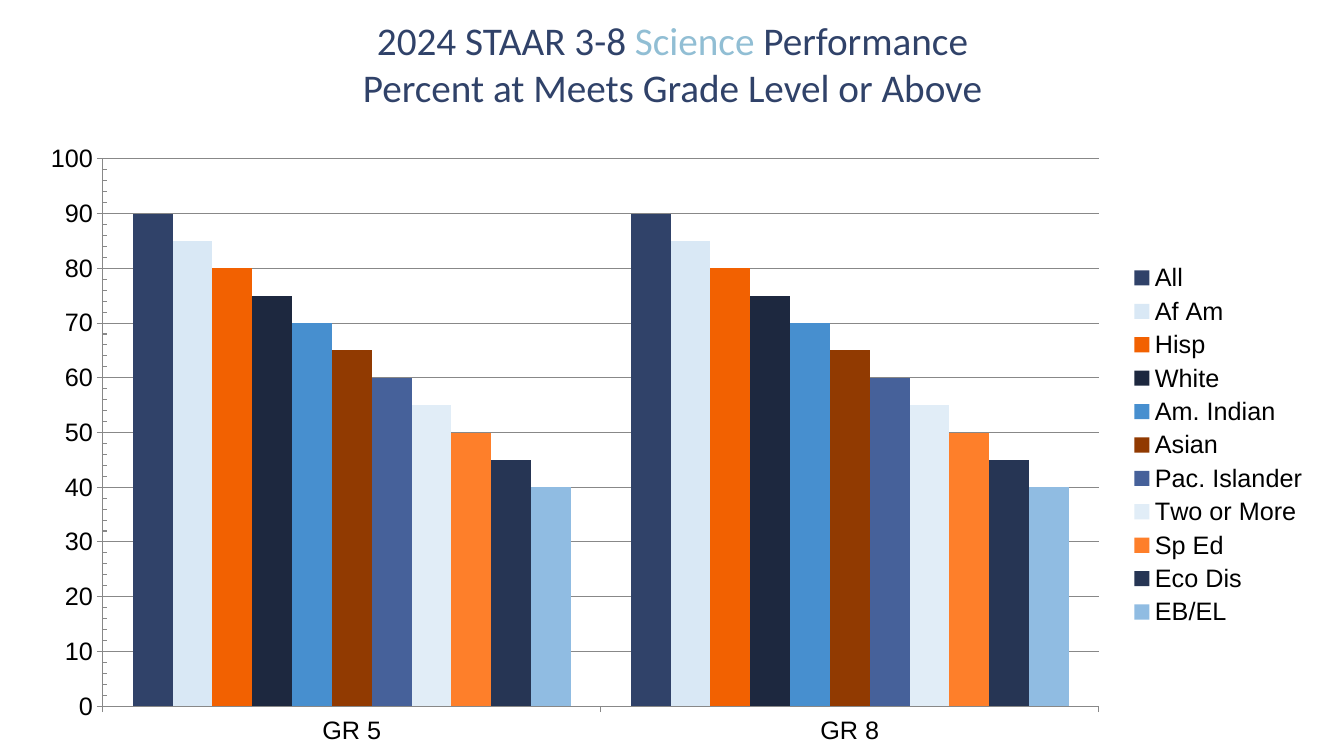
import pptx
import pptx.chart.data
import pptx.dml.color
import pptx.enum.chart
import pptx.enum.text
import pptx.util
from dataclasses import dataclass
from lxml import etree
from pptx.util import Inches


@dataclass(frozen=True)
class Theme:
    navy: str = "304269"
    accent: str = "91BED4"
    text: str = "000000"
    rule: str = "888888"
    title_font: str = "Calibri"
    chart_font: str = "Arial"
    title_size: int = 28
    chart_size: int = 18
    rule_width: float = 0.75


THEME = Theme()
GRADES = ["GR 5", "GR 8"]
# Student group and its bar colour, from highest to lowest
GROUPS = [
    ("All", THEME.navy), ("Af Am", "D9E8F5"), ("Hisp", "F26101"),
    ("White", "1D283F"), ("Am. Indian", "478FCF"), ("Asian", "913A01"),
    ("Pac. Islander", "46619A"), ("Two or More", "E1EDF7"),
    ("Sp Ed", "FE7F2A"), ("Eco Dis", "263554"), ("EB/EL", "90BCE2"),
]
TOP_SCORE, SCORE_STEP = 90, 5


def rgb(value):
    return pptx.dml.color.RGBColor.from_string(value)


def style_font(font, name, size, color):
    font.name = name
    font.size = pptx.util.Pt(size)
    font.color.rgb = rgb(color)


def style_rule(line):
    line.color.rgb = rgb(THEME.rule)
    line.width = pptx.util.Pt(THEME.rule_width)


def add_title(s, left, top, width, height):
    sp = s.shapes.title
    sp.left, sp.top = Inches(left), Inches(top)
    sp.width, sp.height = Inches(width), Inches(height)
    tf = sp.text_frame
    tf.word_wrap = True
    tf.auto_size = pptx.enum.text.MSO_AUTO_SIZE.NONE
    tf.vertical_anchor = pptx.enum.text.MSO_ANCHOR.MIDDLE
    # The deeper bottom inset lifts the two lines towards the top
    tf.margin_bottom = Inches(0.45)
    lines = [
        [("2024 STAAR 3-8 ", THEME.navy), ("Science ", THEME.accent),
         ("Performance", THEME.navy)],
        [("Percent at Meets Grade Level or Above", THEME.navy)],
    ]
    for i, line in enumerate(lines):
        p = tf.add_paragraph() if i else tf.paragraphs[0]
        p.alignment = pptx.enum.text.PP_ALIGN.CENTER
        for text, color in line:
            r = p.add_run()
            r.text = text
            style_font(r.font, THEME.title_font, THEME.title_size, color)


def place_plot(chart, x, y, w, h):
    """Fix the inner plot area, in fractions of the chart."""
    plot_area = chart._chartSpace.chart.plotArea
    ns = plot_area.nsmap["c"]
    for old in plot_area.findall(f"{{{ns}}}layout"):
        plot_area.remove(old)
    layout = etree.Element(f"{{{ns}}}layout")
    manual = etree.SubElement(layout, f"{{{ns}}}manualLayout")
    settings = [("layoutTarget", "inner"), ("xMode", "edge"), ("yMode", "edge"),
                ("x", x), ("y", y), ("w", w), ("h", h)]
    for tag, value in settings:
        etree.SubElement(manual, f"{{{ns}}}{tag}").set("val", str(value))
    plot_area.insert(0, layout)


def add_scores_chart(s, left, top, width, height):
    data = pptx.chart.data.CategoryChartData()
    data.categories = GRADES
    for i, (group, _) in enumerate(GROUPS):
        data.add_series(group, [TOP_SCORE - SCORE_STEP * i] * len(GRADES))
    chart = s.shapes.add_chart(
        pptx.enum.chart.XL_CHART_TYPE.COLUMN_CLUSTERED,
        Inches(left), Inches(top), Inches(width), Inches(height), data).chart
    chart.has_title = False
    style_font(chart.font, THEME.chart_font, THEME.chart_size, THEME.text)
    place_plot(chart, 0.06, 0.04, 0.77, 0.88)

    # Bars
    plot = chart.plots[0]
    plot.gap_width = 150
    plot.overlap = 0
    plot.vary_by_categories = False
    for series, (_, color) in zip(plot.series, GROUPS):
        series.format.fill.solid()
        series.format.fill.fore_color.rgb = rgb(color)

    # Axes
    tick = pptx.enum.chart.XL_TICK_MARK
    for axis in (chart.category_axis, chart.value_axis):
        axis.major_tick_mark = tick.OUTSIDE
        style_rule(axis.format.line)
        style_font(axis.tick_labels.font, THEME.chart_font,
                   THEME.chart_size, THEME.text)
    scores = chart.value_axis
    scores.minimum_scale, scores.maximum_scale = 0, 100
    scores.major_unit, scores.minor_unit = 10, 2
    scores.minor_tick_mark = tick.INSIDE
    scores.has_major_gridlines = True
    style_rule(scores.major_gridlines.format.line)

    # Legend
    chart.has_legend = True
    chart.legend.position = pptx.enum.chart.XL_LEGEND_POSITION.RIGHT
    chart.legend.include_in_layout = False
    style_font(chart.legend.font, THEME.chart_font, THEME.chart_size, THEME.text)


def main():
    prs = pptx.Presentation()
    prs.slide_width, prs.slide_height = Inches(13.33), Inches(7.5)
    s = prs.slides.add_slide(prs.slide_layouts.get_by_name("Title Only"))
    add_title(s, 1.67, 0.33, 10, 1)
    add_scores_chart(s, 0.25, 1.33, 12.83, 6.17)
    prs.save("out.pptx")


if __name__ == "__main__":
    main()
